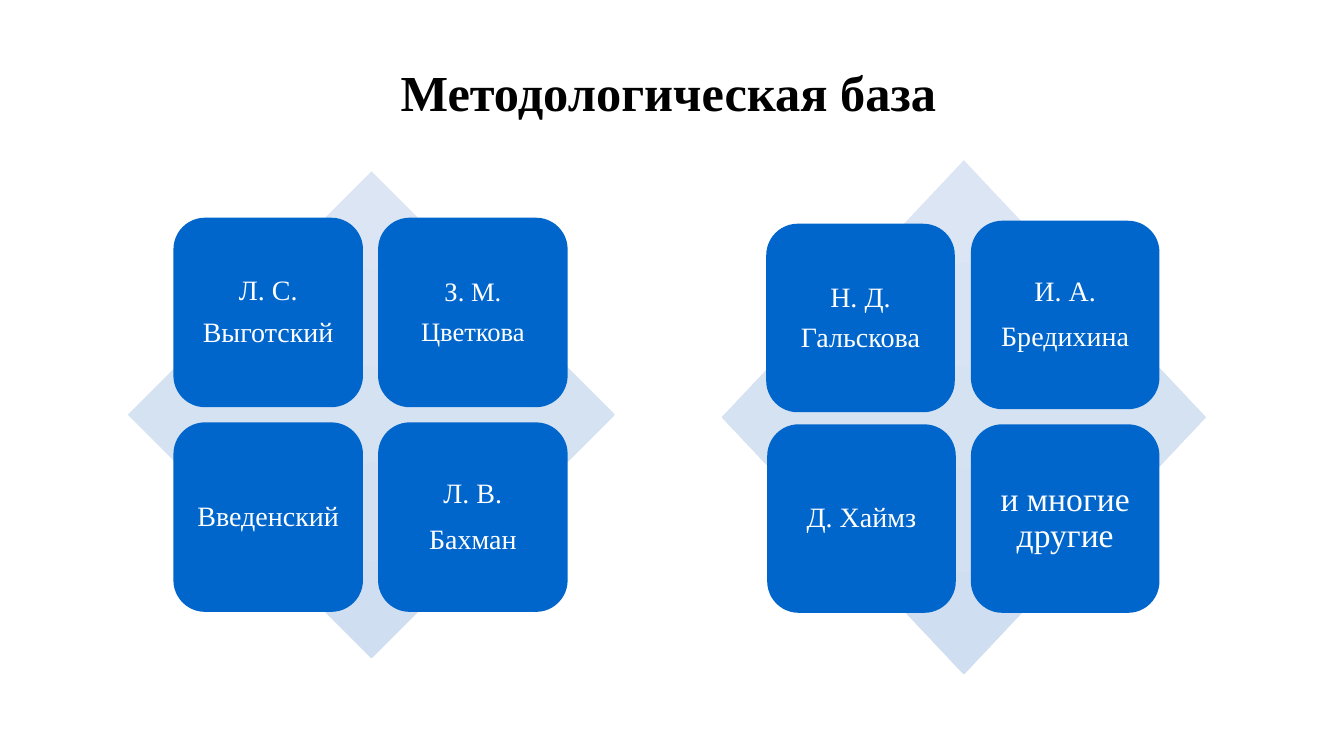
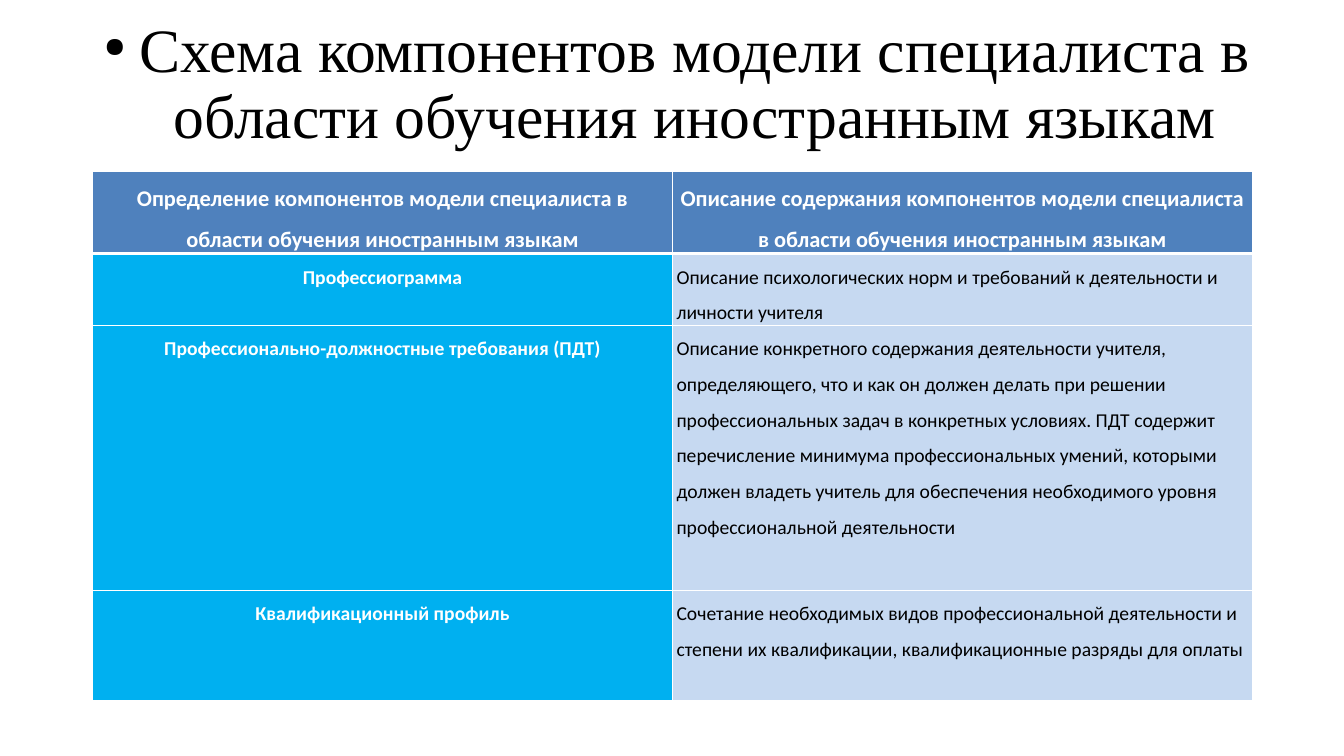
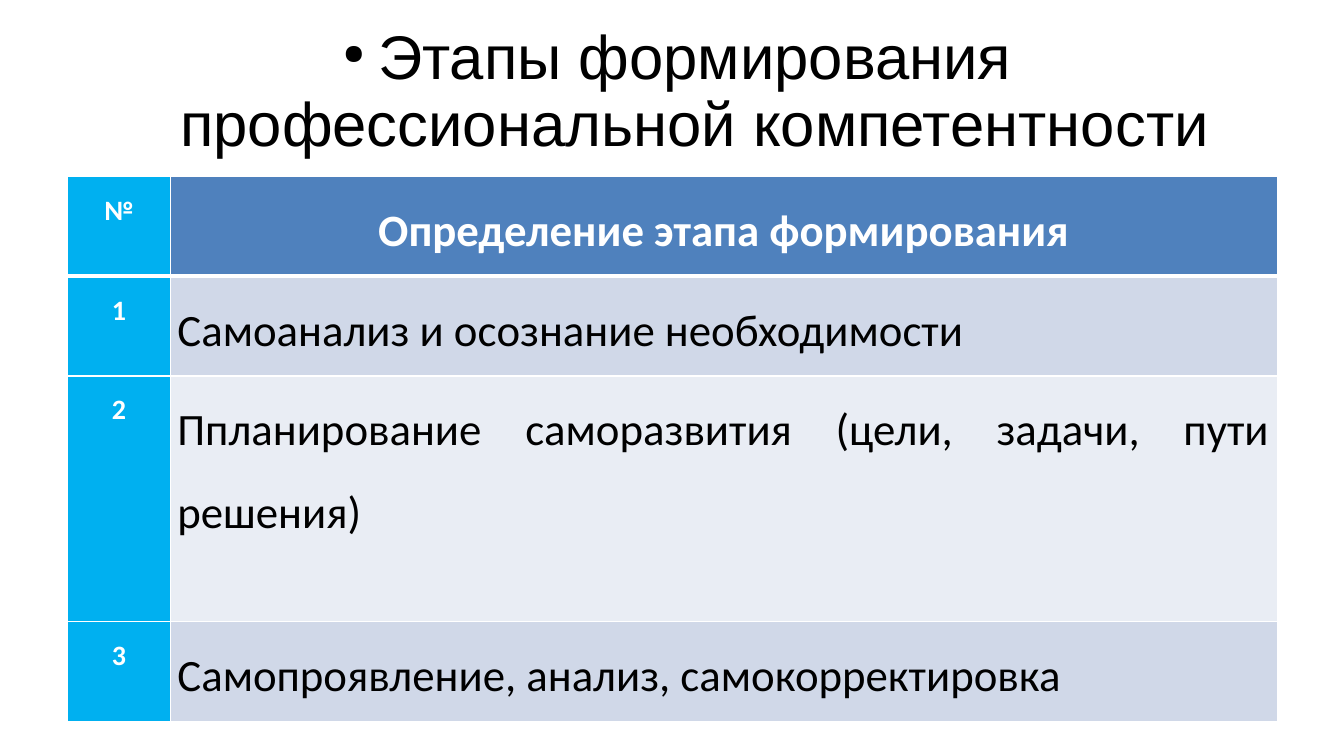
from lxml import etree
from pptx import Presentation
from pptx.dml.color import RGBColor
from pptx.enum.shapes import MSO_SHAPE
from pptx.enum.text import MSO_ANCHOR, MSO_AUTO_SIZE, PP_ALIGN
from pptx.oxml.ns import qn
from pptx.util import Inches, Pt

LEFT, CENTER, JUSTIFY = PP_ALIGN.LEFT, PP_ALIGN.CENTER, PP_ALIGN.JUSTIFY
MIDDLE = MSO_ANCHOR.MIDDLE
NO_AUTOFIT = MSO_AUTO_SIZE.NONE
DIAMOND, ROUNDED = MSO_SHAPE.DIAMOND, MSO_SHAPE.ROUNDED_RECTANGLE

SERIF, SANS, BODY = "Times New Roman", "Arial", "Calibri"
COLORS = {
    "black": "000000",
    "white": "FFFFFF",
    "tile": "0066CC",
    "diamond_top": "DBE5F3",
    "diamond_bottom": "D0DEF1",
    "header": "4F81BD",
    "key": "00B0F0",
    "description": "C6D9F1",
    "band_dark": "D0D8E8",
    "band_light": "E9EDF4",
}


def rgb(name):
    return RGBColor.from_string(COLORS[name])


def write(frame, text, size, font=BODY, color="black", bold=False,
          align=CENTER, line=0.9, after=0):
    """Fill a text frame; each line of text becomes a paragraph."""
    frame.text = text
    for paragraph in frame.paragraphs:
        paragraph.alignment = align
        paragraph.line_spacing = line
        paragraph.space_before = Pt(0)
        paragraph.space_after = Pt(after)
        style = paragraph.runs[0].font
        style.name, style.size, style.bold = font, Pt(size), bold
        style.color.rgb = rgb(color)


def set_margins(frame, inset):
    frame.margin_left = frame.margin_right = Inches(inset)
    frame.margin_top = frame.margin_bottom = Inches(inset)


def add_bullet(paragraph):
    properties = paragraph._p.get_or_add_pPr()
    properties.set("marL", str(Inches(0.45)))
    properties.set("indent", str(Inches(-0.35)))
    etree.SubElement(properties, qn("a:buSzPct"), val="45000")
    etree.SubElement(properties, qn("a:buChar"), char="●")


def add_border(cell, side, width):
    line = etree.SubElement(cell._tc.get_or_add_tcPr(), qn("a:ln" + side),
                            w=str(Pt(width)))
    fill = etree.SubElement(line, qn("a:solidFill"))
    etree.SubElement(fill, qn("a:srgbClr"), val=COLORS["white"])


class Deck:
    def __init__(self):
        self.presentation = Presentation()
        self.presentation.slide_width = Inches(13.33)
        self.presentation.slide_height = Inches(7.5)
        self.slide = None

    def add_slide(self, title, box, size=44, font=SERIF, bold=False, bullet=True):
        layout = self.presentation.slide_layouts[5]
        self.slide = self.presentation.slides.add_slide(layout)
        heading = self.slide.shapes.title
        heading.left, heading.top, heading.width, heading.height = map(Inches, box)
        frame = heading.text_frame
        frame.word_wrap = True
        frame.auto_size = NO_AUTOFIT
        frame.vertical_anchor = MIDDLE
        set_margins(frame, 0)
        write(frame, title, size, font, bold=bold)
        if bullet:
            add_bullet(frame.paragraphs[0])

    def add_shape(self, kind, left, top, width, height):
        shape = self.slide.shapes.add_shape(
            kind, Inches(left), Inches(top), Inches(width), Inches(height))
        shape.shadow.inherit = False
        shape.line.fill.background()
        return shape

    def add_diamond(self, left, top, width, height):
        fill = self.add_shape(DIAMOND, left, top, width, height).fill
        fill.gradient()
        fill.gradient_angle = 270
        for stop, name in zip(fill.gradient_stops, ("diamond_top", "diamond_bottom")):
            stop.color.rgb = rgb(name)

    def add_tile(self, text, left, top, side, size=20, after=10):
        tile = self.add_shape(ROUNDED, left, top, side, side)
        tile.fill.solid()
        tile.fill.fore_color.rgb = rgb("tile")
        frame = tile.text_frame
        frame.word_wrap = True
        frame.vertical_anchor = MIDDLE
        set_margins(frame, 0.09)
        write(frame, text, size, SERIF, "white", after=after)

    def add_table(self, left, top, widths, heights, rows, fills, formats, margin):
        """Draw rows of text; fills and formats hold one row of settings each."""
        table = self.slide.shapes.add_table(
            len(rows), len(widths), Inches(left), Inches(top),
            Inches(sum(widths)), Inches(sum(heights))).table
        table.first_row = table.horz_banding = False
        for column, width in zip(table.columns, widths):
            column.width = Inches(width)
        for r, height in enumerate(heights):
            table.rows[r].height = Inches(height)
            for c, text in enumerate(rows[r]):
                cell = table.cell(r, c)
                cell.margin_left = cell.margin_right = Inches(margin)
                cell.margin_top = cell.margin_bottom = 0
                write(cell.text_frame, text, line=1.5, **formats[r][c])
                add_border(cell, "L", 1)
                add_border(cell, "R", 1)
                add_border(cell, "T", 3 if r == 1 else 1)
                add_border(cell, "B", 3 if r == 0 else 1)
                cell.fill.solid()
                cell.fill.fore_color.rgb = rgb(fills[r][c])


def white_bold(size):
    return {"size": size, "color": "white", "bold": True}


def add_basis_slide(deck):
    deck.add_slide("Методологическая база", (3.82, 0.62, 5.62, 0.64),
                   size=36, bold=True, bullet=False)
    deck.add_diamond(1.27, 1.7, 4.83, 4.83)
    deck.add_diamond(7.16, 1.59, 4.8, 5.1)
    first_side, second_side = 1.88, 1.87
    scholars = [
        ("Л. С.\nВыготский", 1.72, 2.16, first_side, 20, 9),
        ("З. М.\nЦветкова", 3.75, 2.16, first_side, 19, 8),
        ("Введенский", 1.72, 4.19, first_side, 20, 9),
        ("Л. В.\nБахман", 3.75, 4.19, first_side, 20, 11),
        ("Н. Д.\nГальскова", 7.6, 2.22, second_side, 20, 7),
        ("И. А.\nБредихина", 9.63, 2.19, second_side, 20, 10),
        ("Д. Хаймз", 7.61, 4.21, second_side, 20, 10),
        ("и многие другие", 9.63, 4.21, second_side, 24, 10),
    ]
    for scholar in scholars:
        deck.add_tile(*scholar)


def add_components_slide(deck):
    deck.add_slide("Схема компонентов модели специалиста в области обучения "
                   "иностранным языкам", (0.92, 0, 11.5, 1.7))
    components = [
        ("Определение компонентов модели специалиста в области обучения "
         "иностранным языкам",
         "Описание содержания компонентов модели специалиста в области обучения "
         "иностранным языкам"),
        ("Профессиограмма",
         "Описание психологических норм и требований к деятельности и личности "
         "учителя"),
        ("Профессионально-должностные требования (ПДТ)",
         "Описание конкретного содержания деятельности учителя, определяющего, "
         "что и как он должен делать при решении профессиональных задач в "
         "конкретных условиях. ПДТ содержит перечисление минимума "
         "профессиональных умений, которыми должен владеть учитель для "
         "обеспечения необходимого уровня профессиональной деятельности"),
        ("Квалификационный профиль",
         "Сочетание необходимых видов профессиональной деятельности и степени "
         "их квалификации, квалификационные разряды для оплаты"),
    ]
    fills = [("header", "header")] + [("key", "description")] * 3
    body = (white_bold(14), {"size": 14, "align": LEFT})
    formats = [(white_bold(16), white_bold(16))] + [body] * 3
    deck.add_table(0.92, 1.7, (5.75, 5.75), (0.8, 0.7, 2.63, 1.1),
                   components, fills, formats, margin=0.04)


def add_stages_slide(deck):
    deck.add_slide("Этапы формирования профессиональной компетентности",
                   (0.67, 0.3, 12, 1.25), font=SANS)
    stages = [
        ("№", "Определение этапа формирования"),
        ("1", "Самоанализ и осознание необходимости"),
        ("2", "Ппланирование саморазвития (цели, задачи, пути решения)"),
        ("3", "Самопроявление, анализ, самокорректировка"),
    ]
    fills = [("key", name)
             for name in ("header", "band_dark", "band_light", "band_dark")]
    body = (white_bold(20), {"size": 32, "align": JUSTIFY})
    formats = [(white_bold(20), white_bold(32))] + [body] * 3
    deck.add_table(0.67, 1.75, (1.02, 10.98), (0.99, 0.99, 2.44, 0.99),
                   stages, fills, formats, margin=0.07)


def main():
    deck = Deck()
    add_basis_slide(deck)
    add_components_slide(deck)
    add_stages_slide(deck)
    deck.presentation.save("out.pptx")


if __name__ == "__main__":
    main()
